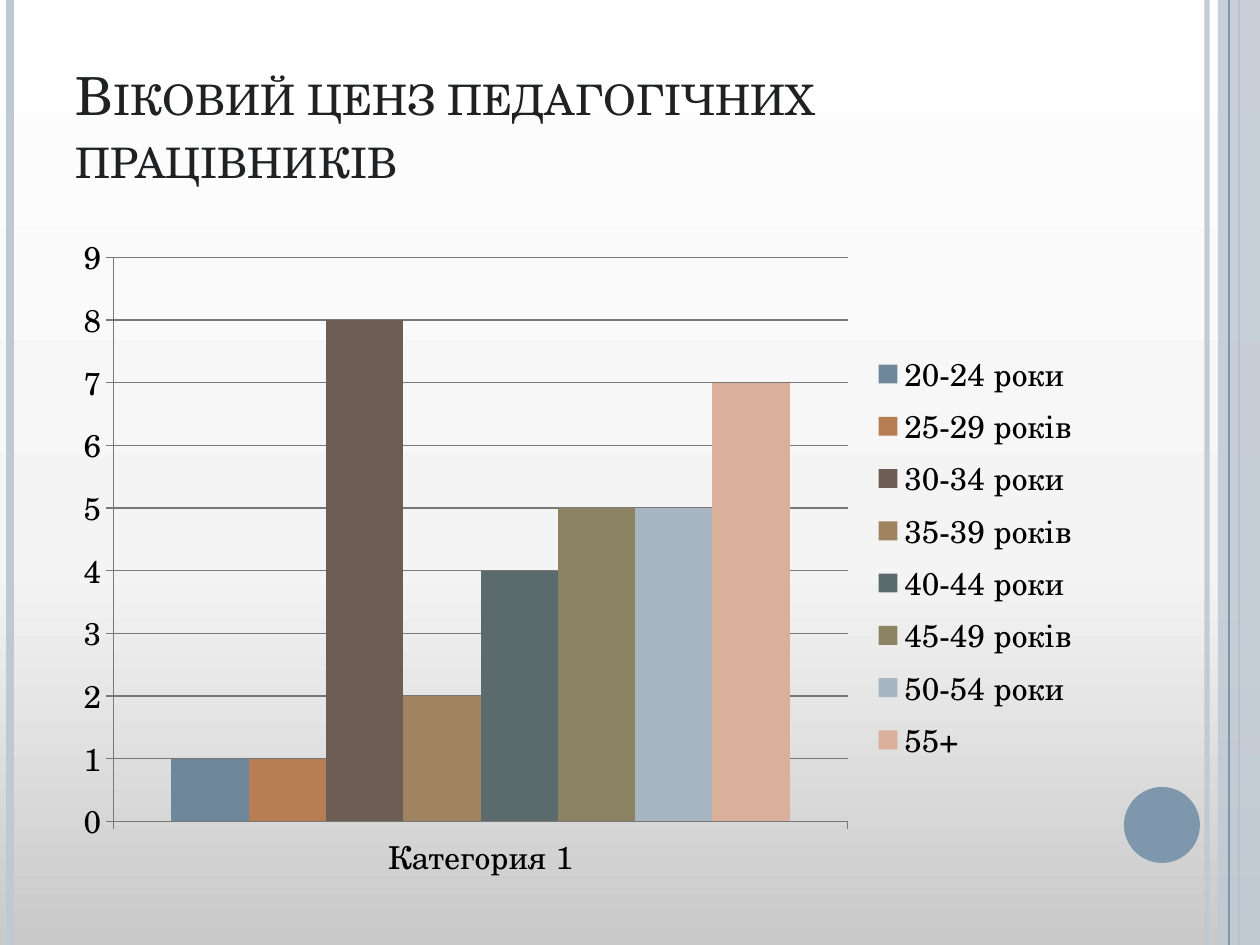
from copy import deepcopy

from lxml.etree import SubElement
from pptx import Presentation
from pptx.chart.data import CategoryChartData
from pptx.dml.color import RGBColor
from pptx.enum.chart import XL_CHART_TYPE, XL_LEGEND_POSITION, XL_TICK_MARK
from pptx.enum.shapes import MSO_CONNECTOR, MSO_SHAPE
from pptx.enum.text import MSO_ANCHOR
from pptx.oxml.ns import qn
from pptx.util import Pt

PX = 914400 / 126
WIDE, HIGH = 1260, 945
FONT = "TeX Gyre Schola"
PALE = RGBColor(0xC0, 0xC9, 0xD3)
BLUE = RGBColor(0x7E, 0x97, 0xAD)
INK = RGBColor(0x1F, 0x21, 0x23)
BLACK = RGBColor(0, 0, 0)
GREY = RGBColor(0x78, 0x78, 0x78)
SHADES = [
    (0, RGBColor(0xC9, 0xC9, 0xC9)),
    (0.4, RGBColor(0xF4, 0xF4, 0xF4)),
    (1, RGBColor(0xFF, 0xFF, 0xFF)),
]
STRIPES = [(1207, PALE, 3), (10, PALE, 4.5), (1239, BLUE, 1.5)]
AGES = [
    ("20-24 роки", 1, RGBColor(0x6F, 0x87, 0x9B)),
    ("25-29 років", 1, RGBColor(0xB8, 0x7E, 0x53)),
    ("30-34 роки", 8, RGBColor(0x6C, 0x5E, 0x55)),
    ("35-39 років", 2, RGBColor(0xA0, 0x83, 0x60)),
    ("40-44 роки", 4, RGBColor(0x5B, 0x6A, 0x6D)),
    ("45-49 років", 5, RGBColor(0x8B, 0x83, 0x62)),
    ("50-54 роки", 5, RGBColor(0xA8, 0xB5, 0xC3)),
    ("55+", 7, RGBColor(0xDA, 0xB0, 0x9A)),
]


def px(*sizes):
    """Turn pixel lengths into EMU."""
    return [round(size * PX) for size in sizes]


def fade(color, share):
    """Make the first colour inside an element partly clear."""
    node = next(color.iter(qn("a:srgbClr")))
    SubElement(node, qn("a:alpha"), val=str(share * 1000))


def paint_back(slide):
    """Fill the background with an upward gradient."""
    fill = slide.background.fill
    fill.gradient()
    fill.gradient_angle = 90
    stops = next(slide.element.iter(qn("a:gsLst")))
    stops.insert(1, deepcopy(stops[0]))
    for stop, (place, color) in zip(fill.gradient_stops, SHADES):
        stop.position = place
        stop.color.rgb = color


def add_stripe(slide, left, color, width):
    """Draw a full-height upright line."""
    line = slide.shapes.add_connector(
        MSO_CONNECTOR.STRAIGHT, *px(left, 0, left, HIGH))
    line.line.color.rgb = color
    line.line.width = Pt(width)
    SubElement(line.element.spPr, qn("a:effectLst"))
    return line


def add_solid(slide, kind, box, color):
    """Draw a filled shape with no outline."""
    shape = slide.shapes.add_shape(kind, *px(*box))
    shape.shadow.inherit = False
    shape.fill.solid()
    shape.fill.fore_color.rgb = color
    shape.line.fill.background()
    return shape


def add_title(slide, text):
    """Add the small-caps heading."""
    frame = slide.shapes.add_textbox(*px(63, 38, 1029, 157)).text_frame
    frame.word_wrap = True
    frame.vertical_anchor = MSO_ANCHOR.BOTTOM
    para = frame.paragraphs[0]
    run = para.add_run()
    run.text = text
    run.font.size = Pt(30)
    run.font.name = FONT
    run.font.color.rgb = INK
    run.font._element.set("cap", "small")


def style_axis(axis):
    """Give an axis its grey line and outer ticks."""
    axis.major_tick_mark = XL_TICK_MARK.OUTSIDE
    axis.minor_tick_mark = XL_TICK_MARK.NONE
    axis.format.line.color.rgb = GREY
    axis.format.line.width = Pt(0.75)


def add_columns(slide):
    """Add the column chart of age groups."""
    data = CategoryChartData()
    data.categories = ["Категория 1"]
    for name, count, _ in AGES:
        data.add_series(name, [count])
    chart = slide.shapes.add_chart(
        XL_CHART_TYPE.COLUMN_CLUSTERED, *px(63, 221, 1029, 672), data).chart
    chart.has_title = False
    chart.font.size = Pt(18)
    chart.font.name = FONT
    chart.font.color.rgb = BLACK
    chart.has_legend = True
    chart.legend.position = XL_LEGEND_POSITION.RIGHT
    chart.legend.include_in_layout = False
    plot = chart.plots[0]
    plot.gap_width = 150
    plot.overlap = 0
    plot.vary_by_categories = False
    for bar, (_, _, color) in zip(plot.series, AGES):
        bar.format.fill.solid()
        bar.format.fill.fore_color.rgb = color
    scale = chart.value_axis
    for axis in (chart.category_axis, scale):
        style_axis(axis)
    scale.minimum_scale, scale.maximum_scale, scale.major_unit = 0, 9, 1
    scale.has_major_gridlines = True
    grid = scale.major_gridlines.format.line
    grid.color.rgb = GREY
    grid.width = Pt(0.75)


def main():
    """Build and save the slide."""
    deck = Presentation()
    deck.slide_width, deck.slide_height = px(WIDE, HIGH)
    slide = deck.slides.add_slide(deck.slide_layouts[6])
    paint_back(slide)
    lines = [add_stripe(slide, *stripe) for stripe in STRIPES]
    fade(lines[0].element, 93)
    band = add_solid(slide, MSO_SHAPE.RECTANGLE, (1218, 0, 42, HIGH), PALE)
    fade(band.element, 87)
    add_stripe(slide, 1229, BLUE, 0.75)
    add_solid(slide, MSO_SHAPE.OVAL, (1124, 787, 76, 76), BLUE)
    add_title(slide, "Віковий ценз педагогічних працівників")
    add_columns(slide)
    deck.save("out.pptx")


if __name__ == "__main__":
    main()
